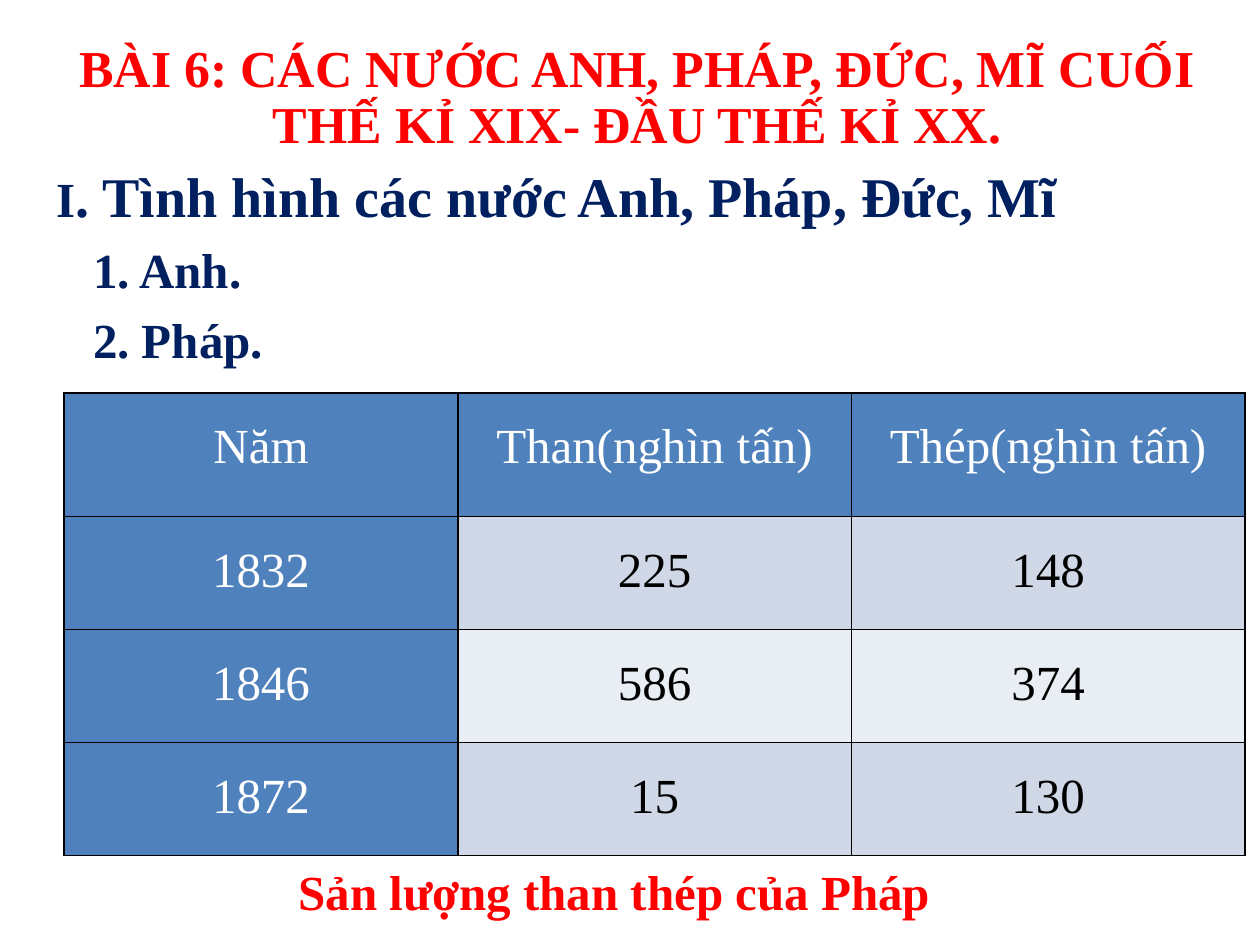
from lxml import etree
from pptx import Presentation
from pptx.dml.color import RGBColor
from pptx.enum.text import MSO_ANCHOR, MSO_AUTO_SIZE, PP_ALIGN
from pptx.oxml.ns import qn
from pptx.util import Inches, Pt

CENTER, LEFT = PP_ALIGN.CENTER, PP_ALIGN.LEFT
TOP = MSO_ANCHOR.TOP
NO_FIT = MSO_AUTO_SIZE.NONE
TITLE_ONLY = 5
WIDTH, HEIGHT = 10, 7.5
COLUMNS, ROWS = 100, 75
RED, NAVY, BLUE, WHITE, BLACK = "FF0000", "002060", "4F81BD", "FFFFFF", "000000"
BANDS = ["D0D8E8", "E9EDF4"]


def color(value):
    return RGBColor.from_string(value)


def write(paragraph, text, size=28, fill=NAVY, bold=True, align=LEFT,
          spacing=None, before=0, font="Times New Roman"):
    paragraph.alignment = align
    paragraph.line_spacing = spacing
    paragraph.space_before = Pt(before)
    run = paragraph.add_run()
    run.text = text
    run.font.name = font
    run.font.size = Pt(size)
    run.font.bold = bold
    run.font.color.rgb = color(fill)


def add_border(cell, line_color, points):
    properties = cell._tc.get_or_add_tcPr()
    for position, side in enumerate(("a:lnL", "a:lnR", "a:lnT", "a:lnB")):
        line = etree.Element(qn(side), w=str(Pt(points)))
        fill = etree.SubElement(line, qn("a:solidFill"))
        etree.SubElement(fill, qn("a:srgbClr"), val=line_color)
        properties.insert(position, line)


class Lesson:
    def __init__(self):
        self.presentation = Presentation()
        self.presentation.slide_width = Inches(WIDTH)
        self.presentation.slide_height = Inches(HEIGHT)
        layout = self.presentation.slide_layouts[TITLE_ONLY]
        self.slide = self.presentation.slides.add_slide(layout)

    def place(self, column, row, columns, rows):
        across, down = WIDTH / COLUMNS, HEIGHT / ROWS
        return [Inches(column * across), Inches(row * down),
                Inches(columns * across), Inches(rows * down)]

    def prepare(self, shape):
        frame = shape.text_frame
        frame.word_wrap = True
        frame.auto_size = NO_FIT
        frame.vertical_anchor = TOP
        return frame

    def title(self, text, *area):
        shape = self.slide.shapes.title
        shape.left, shape.top, shape.width, shape.height = self.place(*area)
        write(self.prepare(shape).paragraphs[0], text, size=29.6, fill=RED,
              align=CENTER, spacing=0.9)

    def text_box(self, *area):
        return self.prepare(self.slide.shapes.add_textbox(*self.place(*area)))

    def outline(self, numeral, heading, items, *area):
        frame = self.text_box(*area)
        paragraph = frame.paragraphs[0]
        write(paragraph, numeral)
        write(paragraph, heading, size=32)
        for item in items:
            paragraph = frame.add_paragraph()
            properties = paragraph._p.get_or_add_pPr()
            properties.set("marL", str(Inches(0.29)))
            write(paragraph, item, before=6.5)

    def caption(self, text, *area):
        write(self.text_box(*area).paragraphs[0], text, fill=RED)

    def table(self, records, header_rows, *area):
        left, top, width, height = self.place(*area)
        table = self.slide.shapes.add_table(
            len(records), len(records[0]), left, top, width, height).table
        header_height = Inches(header_rows * HEIGHT / ROWS)
        for index, row in enumerate(table.rows):
            row.height = (height - header_height) // (len(records) - 1) if index else header_height
        for row, record in enumerate(records):
            for column, text in enumerate(record):
                is_header = row == 0 or column == 0
                cell = table.cell(row, column)
                cell.margin_left = cell.margin_right = Inches(0.07)
                cell.margin_top = cell.margin_bottom = 0
                cell.fill.solid()
                cell.fill.fore_color.rgb = color(BLUE if is_header else BANDS[(row - 1) % 2])
                add_border(cell, BLACK, 1)
                write(cell.text_frame.paragraphs[0], text, bold=False, align=CENTER,
                      fill=WHITE if is_header else BLACK, spacing=1.5)


def main():
    lesson = Lesson()
    lesson.title("BÀI 6: CÁC NƯỚC ANH, PHÁP, ĐỨC, MĨ CUỐI THẾ KỈ XIX- ĐẦU THẾ KỈ XX.",
                 1.2, 2.9, 98.8, 10.2)
    lesson.outline("I", ". Tình hình các nước Anh, Pháp, Đức, Mĩ", ["1. Anh.", "2. Pháp."],
                   3.5, 12.3, 96.5, 19.7)
    lesson.table([
        ["Năm", "Than(nghìn tấn)", "Thép(nghìn tấn)"],
        ["1832", "225", "148"],
        ["1846", "586", "374"],
        ["1872", "15", "130"],
    ], 9.8, 5.1, 31.2, 93.7, 36.7)
    lesson.caption("Sản lượng than thép của Pháp", 22.7, 67.9, 61.7, 5.7)
    lesson.presentation.save("out.pptx")


if __name__ == "__main__":
    main()
